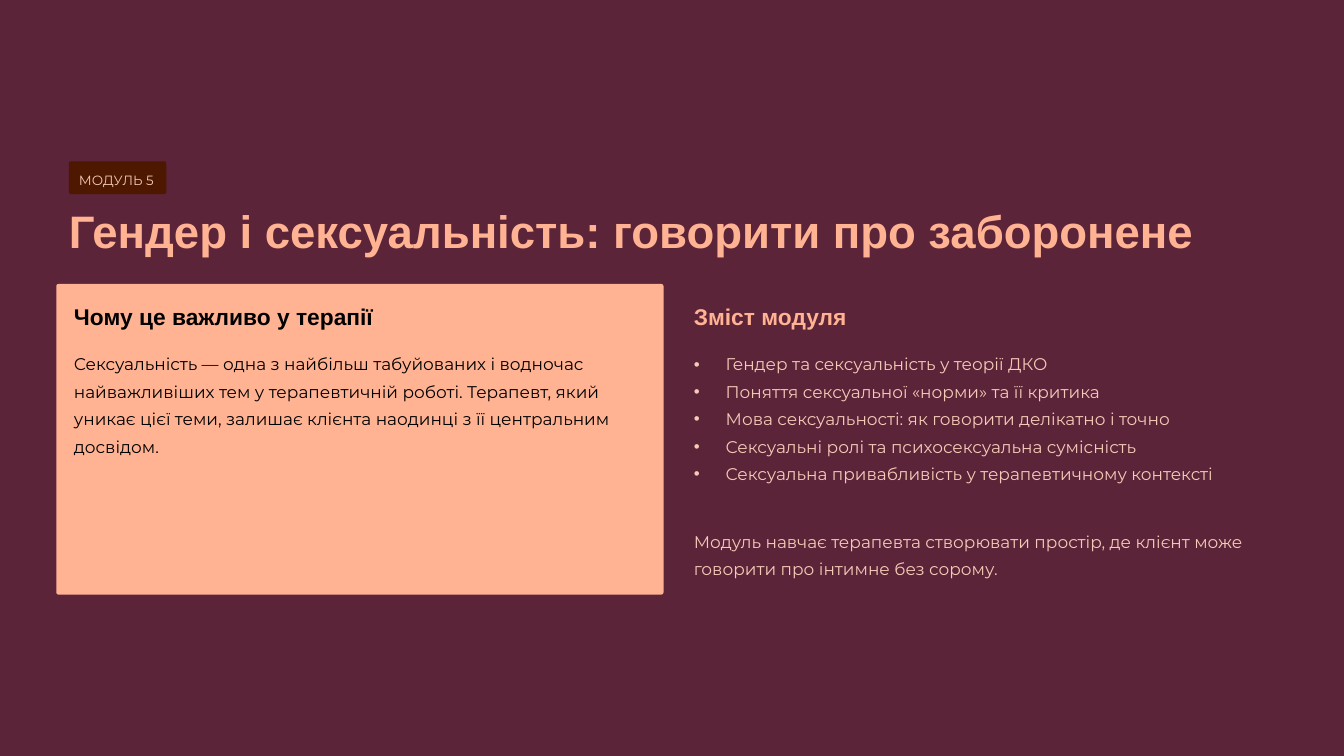
"""Builds the opening slide of a module on gender and sexuality."""
import lxml.etree
import pptx
import pptx.dml.color
import pptx.enum.shapes
import pptx.enum.text
import pptx.oxml.ns
import pptx.util

Inches = pptx.util.Inches
Pt = pptx.util.Pt

COLORS = {
    "plum": "5C2438",
    "brown": "4D1700",
    "peach": "FFB393",
    "cream": "F4CAB8",
    "black": "000000",
}
HEADING = {"font": "Arial", "size": 19.5, "leading": 24.5, "bold": True, "wrap": False}
BODY = {"font": "Montserrat", "size": 14.5, "leading": 23.5}
TOPICS = [
    "Гендер та сексуальність у теорії ДКО",
    "Поняття сексуальної «норми» та її критика",
    "Мова сексуальності: як говорити делікатно і точно",
    "Сексуальні ролі та психосексуальна сумісність",
    "Сексуальна привабливість у терапевтичному контексті",
]


def rgb(name):
    """Return the named palette colour."""
    return pptx.dml.color.RGBColor.from_string(COLORS[name])


def add_bullet(paragraph, indent):
    """Give the paragraph a hanging bullet."""
    properties = paragraph._p.get_or_add_pPr()
    properties.set("marL", str(Inches(indent)))
    properties.set("indent", str(-Inches(indent)))
    for tag, key, value in (("a:buFont", "typeface", "Arial"), ("a:buChar", "char", "•")):
        lxml.etree.SubElement(properties, pptx.oxml.ns.qn(tag)).set(key, value)


def write(frame, text, *, font, size, leading, color, bold=False, wrap=True, indent=0):
    """Fill a text frame, one paragraph for each line of text."""
    frame.margin_left = frame.margin_right = 0
    frame.margin_top = frame.margin_bottom = 0
    frame.vertical_anchor = pptx.enum.text.MSO_ANCHOR.TOP
    frame.word_wrap = wrap
    frame.text = text
    for paragraph in frame.paragraphs:
        if indent:
            add_bullet(paragraph, indent)
        paragraph.line_spacing = Pt(leading)
        style = paragraph.runs[0].font
        style.name = font
        style.size = Pt(size)
        style.bold = bold
        style.color.rgb = rgb(color)


class ModuleSlide:
    """A slide with the module's look."""

    def __init__(self, deck, background):
        """Add a blank slide with a plain background."""
        self.slide = deck.slides.add_slide(deck.slide_layouts[6])
        self.slide.background.fill.solid()
        self.slide.background.fill.fore_color.rgb = rgb(background)

    def panel(self, left, top, width, height, color, rounding):
        """Draw a filled panel with rounded corners."""
        panel = self.slide.shapes.add_shape(
            pptx.enum.shapes.MSO_SHAPE.ROUNDED_RECTANGLE,
            Inches(left), Inches(top), Inches(width), Inches(height))
        panel.adjustments[0] = rounding
        panel.shadow.inherit = False
        panel.fill.solid()
        panel.fill.fore_color.rgb = rgb(color)
        panel.line.fill.background()

    def text(self, left, top, width, height, text, **style):
        """Place a text box."""
        box = self.slide.shapes.add_textbox(
            Inches(left), Inches(top), Inches(width), Inches(height))
        write(box.text_frame, text, **style)


def main():
    """Build and save the deck."""
    deck = pptx.Presentation()
    deck.slide_width, deck.slide_height = Inches(16), Inches(9)
    page = ModuleSlide(deck, "plum")
    edge, reason_left, contents_left = 0.82, 0.88, 8.26
    heading_top, body_top = 3.59, 4.13

    page.panel(edge, 1.92, 1.16, 0.39, "brown", 0.064)
    page.text(0.94, 1.98, 0.92, 0.26, "МОДУЛЬ 5", font="Montserrat",
              size=11.5, leading=18.5, color="cream", wrap=False)
    page.text(edge, 2.39, 13.7, 0.68, "Гендер і сексуальність: говорити про заборонене",
              font="Arial", size=39, leading=49, color="peach", bold=True, wrap=False)

    page.panel(0.67, 3.38, 7.23, 3.7, "peach", 0.008)
    page.text(reason_left, heading_top, 3.8, 0.34, "Чому це важливо у терапії",
              color="black", **HEADING)
    page.text(reason_left, body_top, 6.82, 1.31,
              "Сексуальність — одна з найбільш табуйованих і водночас найважливіших тем "
              "у терапевтичній роботі. Терапевт, який уникає цієї теми, залишає клієнта "
              "наодинці з її центральним досвідом.", color="black", **BODY)

    page.text(contents_left, heading_top, 2.73, 0.34, "Зміст модуля",
              color="peach", **HEADING)
    page.text(contents_left, body_top, 6.93, 1.92, "\n".join(TOPICS),
              color="cream", indent=0.38, **BODY)
    page.text(contents_left, 6.24, 6.93, 0.66,
              "Модуль навчає терапевта створювати простір, де клієнт може говорити "
              "про інтимне без сорому.", color="cream", **BODY)
    deck.save("out.pptx")


if __name__ == "__main__":
    main()
